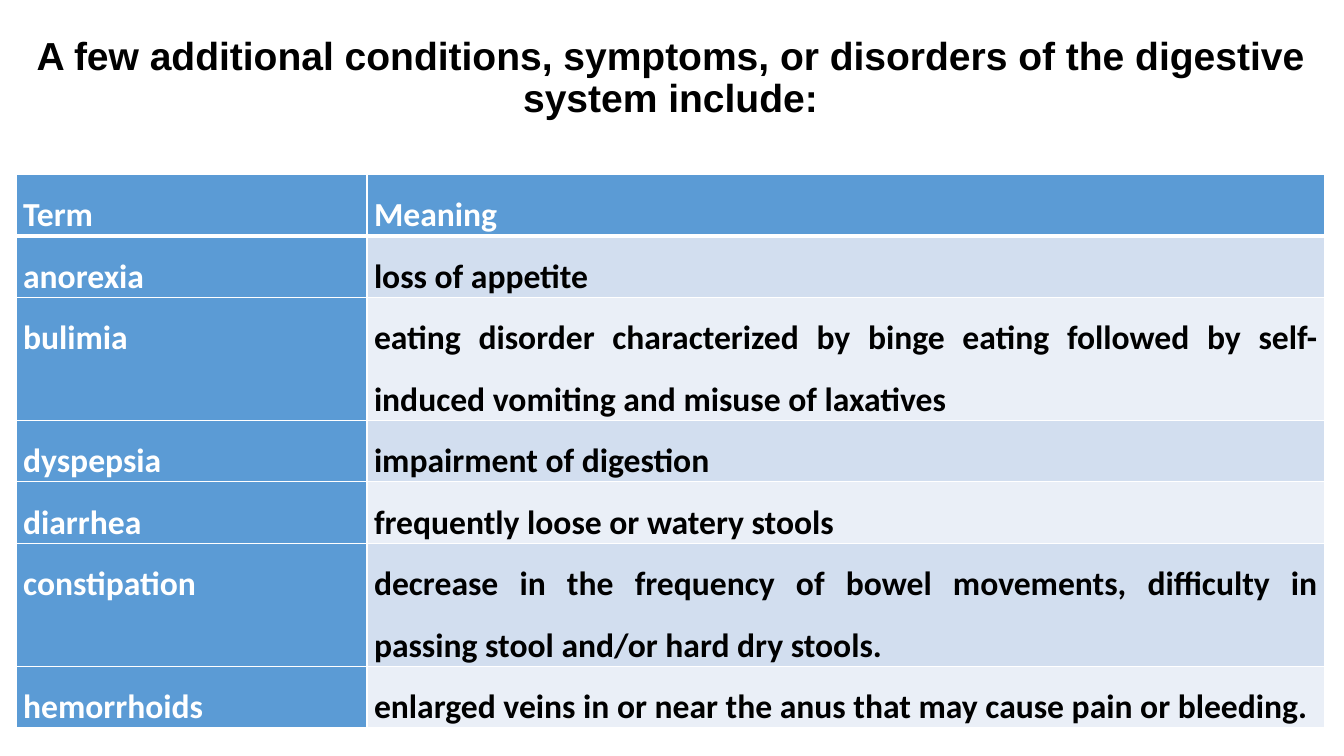
from lxml import etree
from pptx import Presentation
from pptx import util as u
from pptx.dml.color import RGBColor
from pptx.enum import text
from pptx.oxml import ns

WHITE, BLACK, BLUE = "FFFFFF", "000000", "5B9BD5"
BANDS = ("D2DEEF", "EAEFF7")
LINE_HEIGHT = 0.61
ROWS = [
    ("Term", "Meaning", 1),
    ("anorexia", "loss of appetite", 1),
    ("bulimia", "eating disorder characterized by binge eating followed by "
     "self-induced vomiting and misuse of laxatives", 2),
    ("dyspepsia", "impairment of digestion", 1),
    ("diarrhea", "frequently loose or watery stools", 1),
    ("constipation", "decrease in the frequency of bowel movements, difficulty in "
     "passing stool and/or hard dry stools.", 2),
    ("hemorrhoids", "enlarged veins in or near the anus that may cause pain or bleeding.", 1),
]


def colour(value):
    return RGBColor.from_string(value)


def apply(target, values):
    for name, value in values.items():
        setattr(target, name, value)


class SlideBuilder:
    title_font = {"name": "Arial", "size": u.Pt(27.9), "bold": True}
    cell_font = {"name": "Calibri", "size": u.Pt(24), "bold": True}
    title_para = {"alignment": text.PP_ALIGN.CENTER, "line_spacing": 0.9}
    cell_para = {"alignment": text.PP_ALIGN.JUSTIFY, "line_spacing": 1.5}
    cell_margins = {"margin_left": u.Inches(0.07), "margin_right": u.Inches(0.07),
                    "margin_top": 0, "margin_bottom": 0}

    def __init__(self, deck):
        self.slide = deck.slides.add_slide(deck.slide_layouts[5])

    def add_words(self, frame, words, para_values, font_values, font_colour):
        para = frame.paragraphs[0]
        apply(para, para_values)
        span = para.add_run()
        span.text = words
        apply(span.font, font_values)
        span.font.color.rgb = colour(font_colour)

    def title(self, words, left, top, width, height):
        box = self.slide.shapes.title
        apply(box, {"left": u.Inches(left), "top": u.Inches(top),
                    "width": u.Inches(width), "height": u.Inches(height)})
        apply(box.text_frame, {"word_wrap": True, "auto_size": text.MSO_AUTO_SIZE.NONE,
                               "vertical_anchor": text.MSO_ANCHOR.MIDDLE,
                               "margin_bottom": u.Inches(0.72)})
        self.add_words(box.text_frame, words, self.title_para, self.title_font, BLACK)

    def borders(self, cell, widths):
        properties = cell._tc.get_or_add_tcPr()
        for position, (side, width) in enumerate(widths.items()):
            line = etree.Element(ns.qn(f"a:ln{side}"), w=str(u.Pt(width)))
            fill = etree.SubElement(line, ns.qn("a:solidFill"))
            etree.SubElement(fill, ns.qn("a:srgbClr"), val=WHITE)
            properties.insert(position, line)

    def cell(self, cell, words, fill, font_colour, widths):
        apply(cell, self.cell_margins)
        cell.fill.solid()
        cell.fill.fore_color.rgb = colour(fill)
        self.add_words(cell.text_frame, words, self.cell_para, self.cell_font, font_colour)
        self.borders(cell, widths)

    def table(self, rows, left, top, column_widths):
        height = LINE_HEIGHT * sum(lines for _, _, lines in rows)
        table = self.slide.shapes.add_table(
            len(rows), len(column_widths), u.Inches(left), u.Inches(top),
            u.Inches(sum(column_widths)), u.Inches(height)).table
        for column, width in zip(table.columns, column_widths):
            column.width = u.Inches(width)
        for index, (term, meaning, lines) in enumerate(rows):
            table.rows[index].height = u.Inches(LINE_HEIGHT * lines)
            widths = {"L": 1, "R": 1, "T": 3 if index == 1 else 1,
                      "B": 3 if index == 0 else 1}
            band = (BANDS[(index - 1) % 2], BLACK) if index else (BLUE, WHITE)
            self.cell(table.cell(index, 0), term, BLUE, WHITE, widths)
            self.cell(table.cell(index, 1), meaning, *band, widths)


def main():
    deck = Presentation()
    apply(deck, {"slide_width": u.Inches(13.33), "slide_height": u.Inches(7.5)})
    page = SlideBuilder(deck)
    page.title("A few additional conditions, symptoms, or disorders of the digestive "
               "system include:", 0.16, 0.49, 12.98, 1.25)
    page.table(ROWS, 0.16, 1.73, (3.48, 9.5))
    deck.save("out.pptx")


if __name__ == "__main__":
    main()
